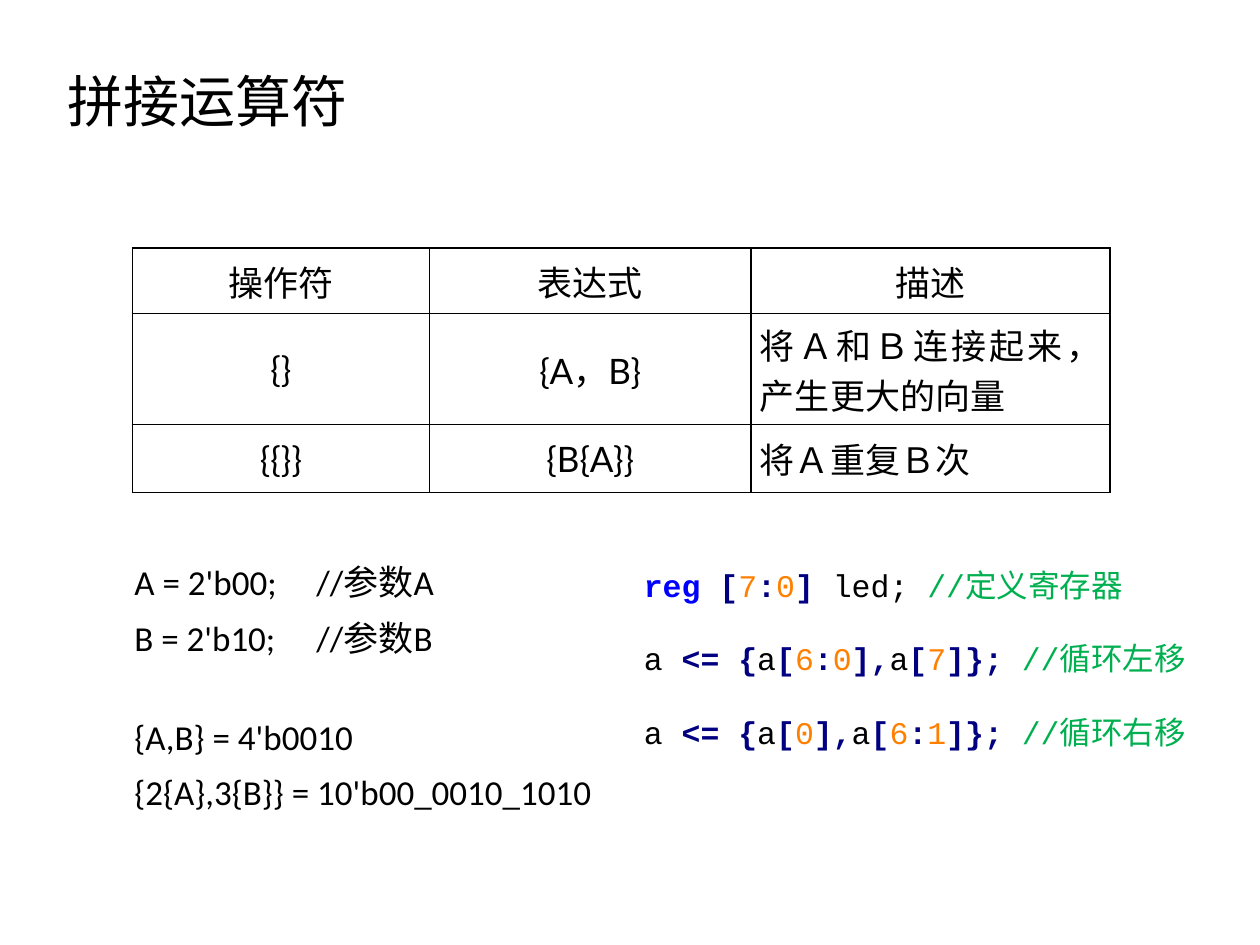
import pptx
import pptx.util
import pptx.dml.color
import pptx.enum.text
import pptx.oxml
import pptx.oxml.ns
from pptx.util import Cm, Pt

ALIGN = pptx.enum.text.PP_ALIGN
MIDDLE = pptx.enum.text.MSO_ANCHOR.MIDDLE
THEME = {
    "title": {"name": "Calibri", "size": Pt(32), "color": "000000"},
    "table": {"name": "Lato", "size": Pt(20), "color": "000000"},
    "example": {"name": "Calibri", "size": Pt(20), "color": "000000"},
    "keyword": {"name": "Courier New", "size": Pt(18), "color": "0000FF", "bold": True},
    "symbol": {"name": "Courier New", "size": Pt(18), "color": "000080", "bold": True},
    "number": {"name": "Courier New", "size": Pt(18), "color": "FF8000", "bold": False},
    "plain": {"name": "Courier New", "size": Pt(18), "color": "000000", "bold": False},
    "comment": {"name": "Courier New", "size": Pt(18), "color": "00B050", "bold": False},
    "border": "000000",
}


def add_run(paragraph, text, style):
    run = paragraph.add_run()
    run.text = text
    for key, value in THEME[style].items():
        if key == "color":
            run.font.color.rgb = pptx.dml.color.RGBColor.from_string(value)
        else:
            setattr(run.font, key, value)


def add_text_frame(left, top, width, height):
    frame = slide.shapes.add_textbox(Cm(left), Cm(top), Cm(width), Cm(height)).text_frame
    frame.word_wrap = True
    return frame


deck = pptx.Presentation()
deck.slide_width, deck.slide_height = Cm(25.4), Cm(19.05)
slide = deck.slides.add_slide(deck.slide_layouts[6])

# Title
title = add_text_frame(1.12, 1.02, 21.89, 2.16)
title.vertical_anchor = MIDDLE
title.paragraphs[0].line_spacing = 0.9
add_run(title.paragraphs[0], "拼接运算符", "title")

# Operator table
operators = [
    ["操作符", "表达式", "描述"],
    ["{}", "{A，B}", "将Ａ和Ｂ连接起来，产生更大的向量"],
    ["{{}}", "{B{A}}", "将Ａ重复Ｂ次"],
]
column_widths = [5.99, 6.48, 7.24]
row_heights = [1.32, 2.24, 1.37]
operator_table = slide.shapes.add_table(
    3, 3, Cm(2.67), Cm(5), Cm(sum(column_widths)), Cm(sum(row_heights))).table
for column, width in zip(operator_table.columns, column_widths):
    column.width = Cm(width)
for row, height in zip(operator_table.rows, row_heights):
    row.height = Cm(height)

cell_format = {"margin_left": Cm(0.18), "margin_right": Cm(0.18),
               "margin_top": 0, "margin_bottom": 0, "vertical_anchor": MIDDLE}
for r, texts in enumerate(operators):
    for c, text in enumerate(texts):
        cell = operator_table.cell(r, c)
        for key, value in cell_format.items():
            setattr(cell, key, value)
        paragraph = cell.text_frame.paragraphs[0]
        paragraph.alignment = ALIGN.JUSTIFY if r and c == 2 else ALIGN.CENTER
        add_run(paragraph, text, "table")
        properties = cell._tc.get_or_add_tcPr()
        for side in ("lnL", "lnR", "lnT", "lnB"):
            properties.append(pptx.oxml.parse_xml(
                f'<a:{side} {pptx.oxml.ns.nsdecls("a")} w="{Pt(1)}"><a:solidFill>'
                f'<a:srgbClr val="{THEME["border"]}"/></a:solidFill></a:{side}>'))
        cell.fill.background()

# Worked examples: text and space before, with comments on a tab stop
examples = [
    ("A = 2'b00;\t//参数A", 0),
    ("B = 2'b10;\t//参数B", 10),
    ("{A,B} = 4'b0010", 35),
    ("{2{A},3{B}} = 10'b00_0010_1010", 10),
]
example_frame = add_text_frame(2.46, 11.28, 10.03, 6.1)
for i, (text, gap) in enumerate(examples):
    paragraph = example_frame.add_paragraph() if i else example_frame.paragraphs[0]
    paragraph.line_spacing = 0.9
    if gap:
        paragraph.space_before = Pt(gap)
    if "\t" in text:
        paragraph._p.get_or_add_pPr().append(pptx.oxml.parse_xml(
            f'<a:tabLst {pptx.oxml.ns.nsdecls("a")}>'
            f'<a:tab pos="{Cm(3.67)}" algn="l"/></a:tabLst>'))
    add_run(paragraph, text, "example")

# Shift register code, coloured by token kind
assignment = [("plain", "a "), ("symbol", "<= {"), ("plain", "a"), ("symbol", "[")]
high_to_low = [("number", "6"), ("symbol", ":")]
next_part = [("symbol", "],"), ("plain", "a"), ("symbol", "[")]
code_lines = [
    [("keyword", "reg "), ("symbol", "["), ("number", "7"), ("symbol", ":"),
     ("number", "0"), ("symbol", "] "), ("plain", "led; "), ("comment", "//定义寄存器")],
    assignment + high_to_low + [("number", "0")] + next_part
    + [("number", "7"), ("symbol", "]}; "), ("comment", "//循环左移")],
    assignment + [("number", "0")] + next_part + high_to_low
    + [("number", "1"), ("symbol", "]}; "), ("comment", "//循环右移")],
]
code_frame = add_text_frame(12.73, 11.28, 11.66, 4.11)
for i, tokens in enumerate(code_lines):
    paragraph = code_frame.add_paragraph() if i else code_frame.paragraphs[0]
    if i:
        paragraph.space_before = Pt(20.5)
    for kind, text in tokens:
        add_run(paragraph, text, kind)

deck.save("out.pptx")
